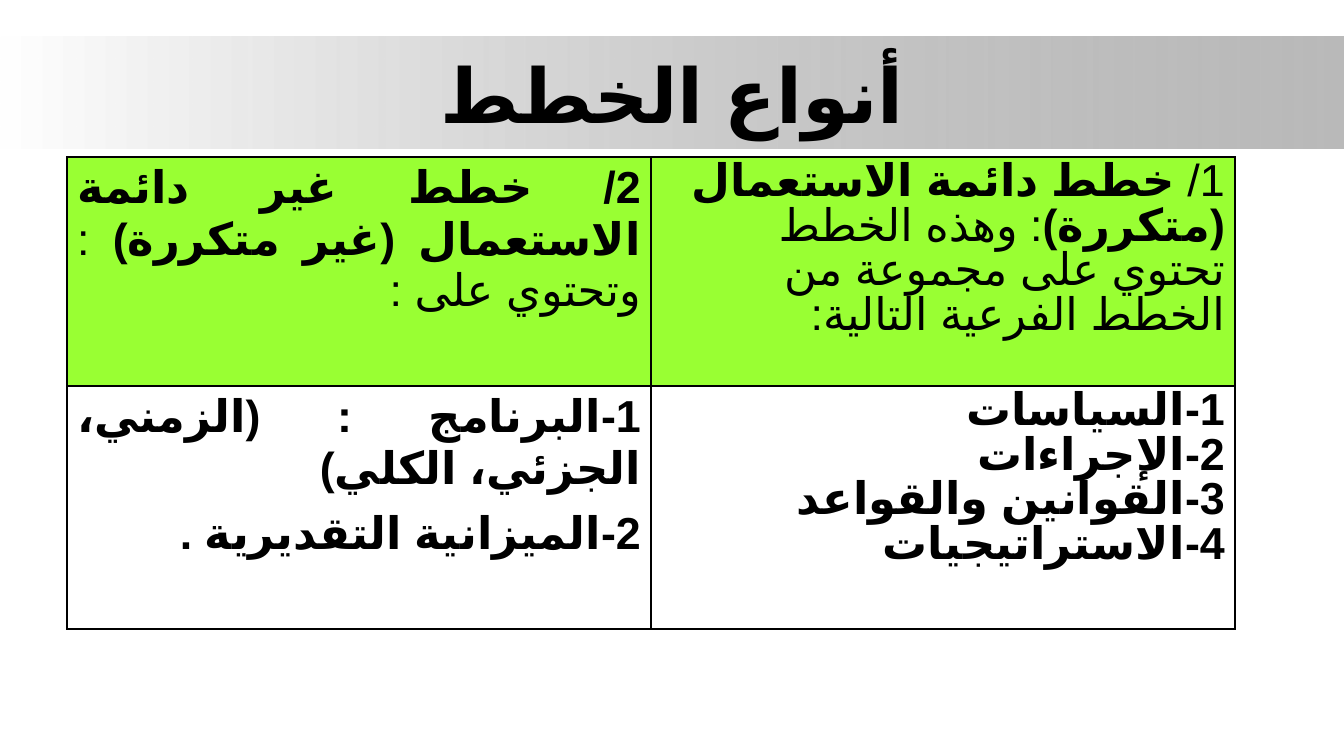
"""Build the slide on the two types of plans."""
import itertools

import pptx
import pptx.dml.color
import pptx.enum.shapes
import pptx.enum.text
import pptx.oxml
import pptx.oxml.ns
import pptx.util

COLORS = {"black": "000000", "white": "FFFFFF", "gray": "808080", "lime": "99FF33"}
PX = 9071
SLIDE = (1344, 756)
BAND = (0, 37, 1344, 112)
TITLE_BOX = (67, 30, 1210, 126)
TABLE_BOX = (67, 157, 1168, 472)
ROW_HEIGHTS = (229, 243)
TITLE = "أنواع الخطط"
ROWS = [
    (
        [[("2/ خطط غير دائمة الاستعمال (غير متكررة)", True), (" : وتحتوي على :", False)]],
        [[("1/ ", False), ("خطط دائمة الاستعمال (متكررة)", True),
          (": وهذه الخطط تحتوي على مجموعة من الخطط الفرعية التالية:", False)]],
    ),
    (
        [[("1-البرنامج : (الزمني، الجزئي، الكلي)", True)],
         [("2-الميزانية التقديرية .", True)]],
        [[("1-السياسات", True)], [("2-الإجراءات", True)],
         [("3-القوانين والقواعد", True)], [("4-الاستراتيجيات", True)]],
    ),
]
ALIGN = pptx.enum.text.PP_ALIGN
COLUMN_STYLES = [
    {"font": "Karla", "align": ALIGN.JUSTIFY, "line": 37, "after": 10},
    {"font": "Arial", "align": ALIGN.RIGHT, "line": 32, "after": 0},
]
ROW_FILLS = ["lime", None]
SCRIPT_FONTS = {True: "DejaVu Sans", False: "Arial"}
A = "http://schemas.openxmlformats.org/drawingml/2006/main"


def px(*values):
    return [pptx.util.Emu(v * PX) for v in values]


def rgb(name):
    return pptx.dml.color.RGBColor.from_string(COLORS[name])


def is_arabic(char):
    return char >= "،"


def write(p, phrases, size, font, align):
    p.alignment = align
    p.font.size = pptx.util.Pt(size)
    p.font.color.rgb = rgb("black")
    for text, bold in phrases:
        for arabic, chars in itertools.groupby(text, is_arabic):
            r = p.add_run()
            r.text = "".join(chars)
            r.font.bold = bold
            r.font.name = font
            r._r.get_or_add_rPr().append(pptx.oxml.parse_xml(
                f'<a:cs xmlns:a="{A}" typeface="{SCRIPT_FONTS[arabic]}"/>'))
    p._p.get_or_add_pPr().set("rtl", "1")


def add_borders(cell):
    tcPr = cell._tc.get_or_add_tcPr()
    for i, side in enumerate("LRTB"):
        tcPr.insert(i, pptx.oxml.parse_xml(
            f'<a:ln{side} xmlns:a="{A}" w="12700"><a:solidFill>'
            f'<a:srgbClr val="{COLORS["black"]}"/></a:solidFill></a:ln{side}>'))


def add_band(s):
    sp = s.shapes.add_shape(pptx.enum.shapes.MSO_SHAPE.RECTANGLE, *px(*BAND))
    sp.shadow.inherit = False
    sp.line.fill.background()
    sp.fill.gradient()
    sp.fill.gradient_angle = 0
    for stop, name, position in zip(sp.fill.gradient_stops, ("white", "gray"), (0, 1)):
        stop.color.rgb = rgb(name)
        stop.position = position
    end = sp._element.spPr.findall(".//" + pptx.oxml.ns.qn("a:srgbClr"))[-1]
    end.append(pptx.oxml.parse_xml(f'<a:alpha xmlns:a="{A}" val="54000"/>'))


def add_title(s):
    tf = s.shapes.add_textbox(*px(*TITLE_BOX)).text_frame
    tf.word_wrap = True
    tf.vertical_anchor = pptx.enum.text.MSO_ANCHOR.MIDDLE
    write(tf.paragraphs[0], [(TITLE, True)], 54, "Arial", ALIGN.CENTER)


def fill_cell(cell, paragraphs, style, fill):
    tf = cell.text_frame
    for i, phrases in enumerate(paragraphs):
        p = tf.add_paragraph() if i else tf.paragraphs[0]
        write(p, phrases, 32, style["font"], style["align"])
        p.line_spacing = pptx.util.Pt(style["line"])
        p.space_after = pptx.util.Pt(style["after"])
    if fill:
        cell.fill.solid()
        cell.fill.fore_color.rgb = rgb(fill)
    else:
        cell.fill.background()
    add_borders(cell)


def add_plans(s):
    table = s.shapes.add_table(len(ROWS), len(COLUMN_STYLES), *px(*TABLE_BOX)).table
    table.first_row = table.horz_banding = False
    for i, (row, height) in enumerate(zip(ROWS, px(*ROW_HEIGHTS))):
        table.rows[i].height = height
        for j, paragraphs in enumerate(row):
            fill_cell(table.cell(i, j), paragraphs, COLUMN_STYLES[j], ROW_FILLS[i])


def main():
    prs = pptx.Presentation()
    prs.slide_width, prs.slide_height = px(*SLIDE)
    s = prs.slides.add_slide(prs.slide_layouts[6])
    add_band(s)
    add_title(s)
    add_plans(s)
    prs.save("out.pptx")


if __name__ == "__main__":
    main()
